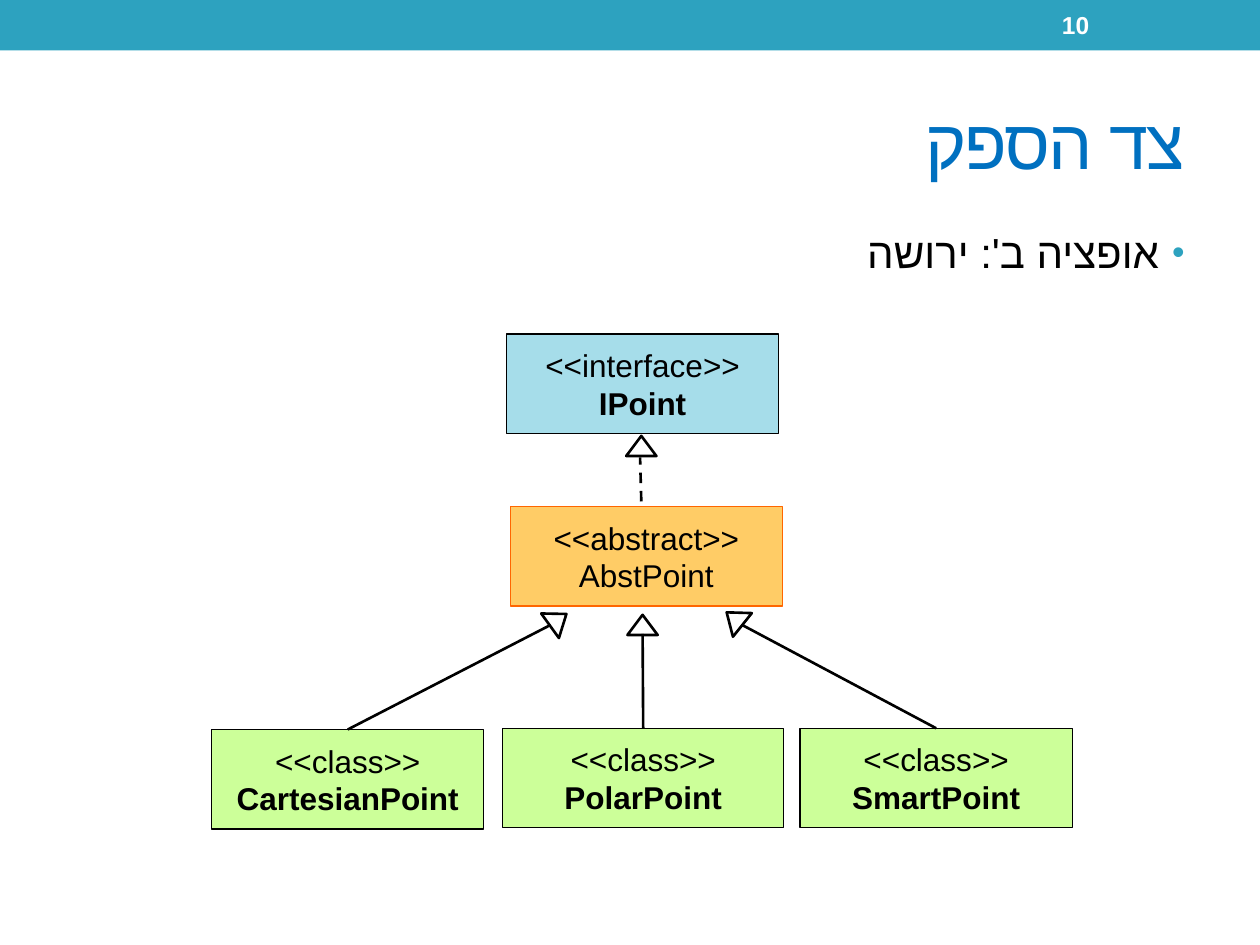
from dataclasses import dataclass

from lxml.etree import SubElement
from pptx import Presentation
from pptx.dml.color import RGBColor
from pptx.enum.dml import MSO_LINE
from pptx.enum.shapes import MSO_CONNECTOR, MSO_SHAPE
from pptx.enum.text import MSO_ANCHOR, MSO_AUTO_SIZE, PP_ALIGN
from pptx.oxml.ns import qn
from pptx.shapes.autoshape import Shape
from pptx.shapes.connector import Connector
from pptx.slide import Slide
from pptx.text.text import TextFrame, _Paragraph
from pptx.util import Inches, Pt

COLORS = {
    "band": "2DA2BF", "title": "0070C0", "text": "000000", "white": "FFFFFF",
    "interface": "A6DDEA", "class": "CCFF99",
    "abstract": "FFCC66", "abstract_line": "FF6600",
}
FONT = "Arial"
BOX_HEIGHT = 0.79
HEAD_WIDTH, HEAD_HEIGHT = 0.24, 0.16


@dataclass
class TypeBox:
    stereotype: str
    name: str
    left: float
    top: float
    width: float = 2.16
    line: str = "text"
    bold_name: bool = True


@dataclass
class Inheritance:
    child: str
    line_start: tuple[float, float]
    line_end: tuple[float, float]
    head: tuple[float, float]
    rotation: float = 0
    joined: bool = True


TYPES = [
    TypeBox("interface", "IPoint", 4.02, 2.65),
    TypeBox("abstract", "AbstPoint", 4.05, 4.02, line="abstract_line", bold_name=False),
    TypeBox("class", "CartesianPoint", 1.68, 5.79),
    TypeBox("class", "PolarPoint", 3.99, 5.78, 2.23),
    TypeBox("class", "SmartPoint", 6.35, 5.78),
]
INHERITANCES = [
    Inheritance("AbstPoint", (5.09, 3.98), (5.08, 3.63), (4.97, 3.46), joined=False),
    Inheritance("CartesianPoint", (2.77, 5.79), (4.37, 4.96), (4.31, 4.84), 54.2),
    Inheritance("PolarPoint", (5.1, 5.78), (5.1, 5.03), (4.98, 4.88)),
    Inheritance("SmartPoint", (7.44, 5.78), (5.89, 4.96), (5.71, 4.83), 308.6),
]


def rgb(key: str) -> RGBColor:
    return RGBColor.from_string(COLORS[key])


def write(paragraph: _Paragraph, text: str, size: float, color: str,
          align: PP_ALIGN, bold: bool = False, rtl: bool = True) -> None:
    paragraph.alignment = align
    paragraph._p.get_or_add_pPr().set("rtl", str(int(rtl)))
    run = paragraph.add_run()
    run.text = text
    run.font.color.rgb = rgb(color)
    font_format = {"name": FONT, "size": Pt(size), "bold": bold}
    for attribute, value in font_format.items():
        setattr(run.font, attribute, value)
    # Hebrew letters take the complex-script font
    SubElement(run._r.get_or_add_rPr(), qn("a:cs")).set("typeface", FONT)


def set_frame(frame: TextFrame, anchor: MSO_ANCHOR, wrap: bool = True) -> None:
    frame_format = {"auto_size": MSO_AUTO_SIZE.NONE, "word_wrap": wrap,
                    "vertical_anchor": anchor}
    for attribute, value in frame_format.items():
        setattr(frame, attribute, value)


def add_text_frame(slide: Slide, left: float, top: float, width: float,
                   height: float, anchor: MSO_ANCHOR) -> TextFrame:
    frame = slide.shapes.add_textbox(
        Inches(left), Inches(top), Inches(width), Inches(height)).text_frame
    set_frame(frame, anchor)
    return frame


def add_type_box(slide: Slide, item: TypeBox) -> Shape:
    box = slide.shapes.add_shape(
        MSO_SHAPE.FLOWCHART_PROCESS, Inches(item.left), Inches(item.top),
        Inches(item.width), Inches(BOX_HEIGHT))
    box.shadow.inherit = False
    box.fill.solid()
    box.fill.fore_color.rgb = rgb(item.stereotype)
    box.line.color.rgb = rgb(item.line)
    box.line.width = Pt(0.75)
    frame = box.text_frame
    set_frame(frame, MSO_ANCHOR.MIDDLE, wrap=False)
    write(frame.paragraphs[0], f"<<{item.stereotype}>>", 18, "text", PP_ALIGN.CENTER)
    write(frame.add_paragraph(), item.name, 18, "text", PP_ALIGN.CENTER, item.bold_name)
    return box


def add_inheritance(slide: Slide, item: Inheritance, child: Shape) -> Connector:
    ends = [Inches(value) for value in item.line_start + item.line_end]
    stem = slide.shapes.add_connector(MSO_CONNECTOR.STRAIGHT, *ends)
    SubElement(stem._element.spPr, qn("a:effectLst"))
    if item.joined:
        stem.begin_connect(child, 0)
    else:
        stem.line.dash_style = MSO_LINE.DASH

    # Hollow triangle that points at the parent type
    left, top = item.head
    head = slide.shapes.add_shape(
        MSO_SHAPE.FLOWCHART_EXTRACT, Inches(left), Inches(top),
        Inches(HEAD_WIDTH), Inches(HEAD_HEIGHT))
    head.shadow.inherit = False
    head.fill.background()
    head.rotation = item.rotation
    for part in (stem, head):
        part.line.color.rgb = rgb("text")
        part.line.width = Pt(1.5)
    return stem


def main() -> None:
    deck = Presentation()
    deck.slide_width, deck.slide_height = Inches(10), Inches(7.5)
    slide = deck.slides.add_slide(deck.slide_layouts[5])

    # Top band and page number
    band = slide.shapes.add_shape(MSO_SHAPE.RECTANGLE, 0, 0, deck.slide_width, Inches(0.4))
    band.shadow.inherit = False
    band.fill.solid()
    band.fill.fore_color.rgb = rgb("band")
    band.line.fill.background()
    page_number = add_text_frame(slide, 8.33, 0.02, 1.17, 0.36, MSO_ANCHOR.MIDDLE)
    write(page_number.paragraphs[0], "10", 14, "white", PP_ALIGN.LEFT, bold=True, rtl=False)

    # Title
    title = slide.shapes.title
    title_place = {"left": 0.5, "top": 0.58, "width": 9, "height": 1.08}
    for attribute, value in title_place.items():
        setattr(title, attribute, Inches(value))
    set_frame(title.text_frame, MSO_ANCHOR.MIDDLE)
    heading = title.text_frame.paragraphs[0]
    write(heading, "צד הספק", 40, "title", PP_ALIGN.RIGHT)
    heading.runs[0]._r.get_or_add_rPr().set("spc", "-100")

    # Bulleted option
    option = add_text_frame(slide, 0.5, 1.75, 9, 5.33, MSO_ANCHOR.TOP).paragraphs[0]
    write(option, "אופציה ב': ירושה", 24, "text", PP_ALIGN.RIGHT)
    properties = option._p.get_or_add_pPr()
    properties.set("marL", str(Inches(0.2)))
    properties.set("indent", str(-Inches(0.2)))
    bullet_color = SubElement(properties, qn("a:buClr"))
    SubElement(bullet_color, qn("a:srgbClr")).set("val", COLORS["band"])
    SubElement(properties, qn("a:buSzPct")).set("val", "85000")
    SubElement(properties, qn("a:buFont")).set("typeface", FONT)
    SubElement(properties, qn("a:buChar")).set("char", "•")

    # Class diagram
    boxes = {item.name: add_type_box(slide, item) for item in TYPES}
    for item in INHERITANCES:
        add_inheritance(slide, item, boxes[item.child])

    deck.save("out.pptx")


if __name__ == "__main__":
    main()
